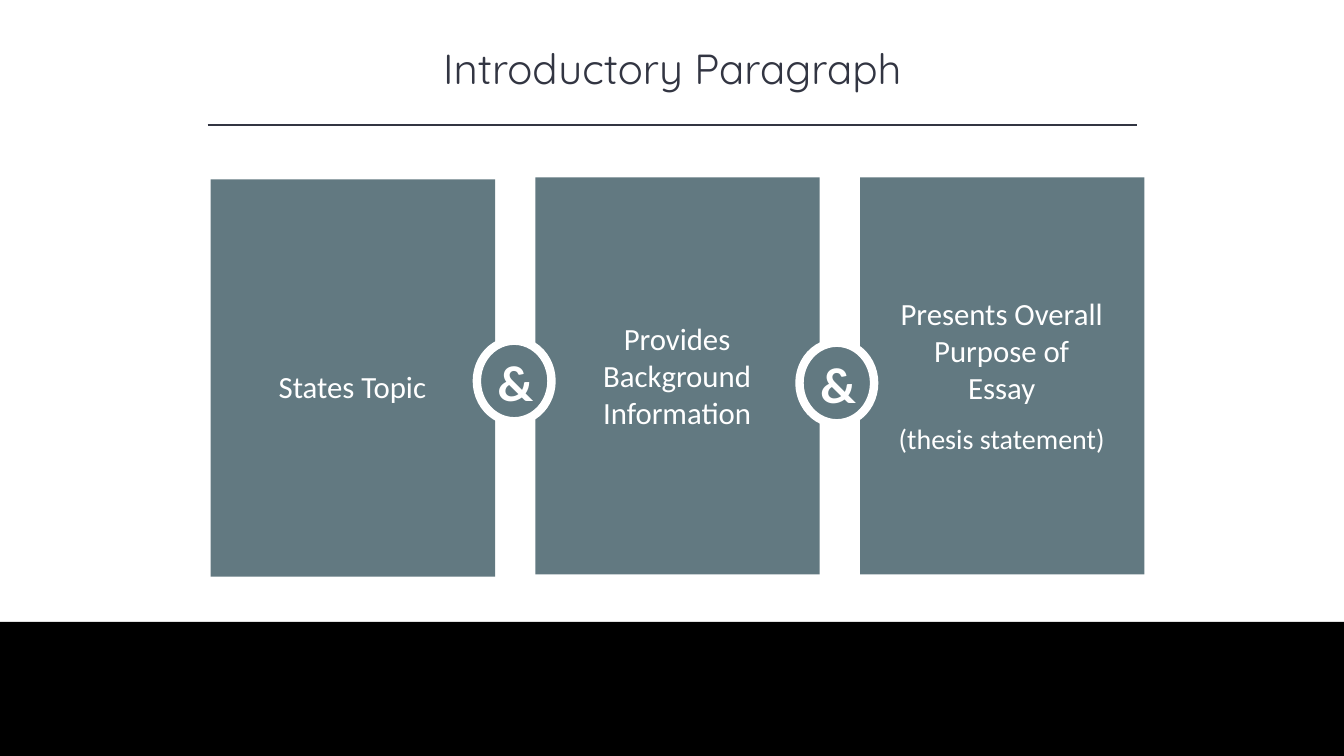
from lxml.etree import SubElement
from pptx import Presentation
from pptx.dml.color import RGBColor
from pptx.enum.shapes import MSO_CONNECTOR, MSO_SHAPE
from pptx.enum.text import MSO_ANCHOR, PP_ALIGN
from pptx.oxml.ns import qn
from pptx.util import Inches, Pt

INK = RGBColor(0x32, 0x35, 0x42)
SLATE = RGBColor(0x62, 0x79, 0x81)
WHITE = RGBColor(0xFF, 0xFF, 0xFF)
BLACK = RGBColor(0x00, 0x00, 0x00)

CARD_WIDTH, CARD_HEIGHT = 2.82, 3.94
CARD_LEFT, CARD_GAP = 2.09, 0.4
LABEL_WIDTH, LABEL_INSET = 2.25, 0.28

# Each card: top, label top, label height, lines of (text, size, line spacing)
CARDS = [
    (1.78, 3.44, 0.6, [("States Topic", 22, 1.5)]),
    (1.76, 3.12, 1.21, [("Provides Background Information", 22, 1)]),
    (1.76, 2.89, 1.66, [("Presents Overall Purpose of Essay", 22, 1),
                        ("(thesis statement)", 20, 1.5)]),
]
BADGES = [(4.73, 3.38), (7.93, 3.4)]


class SlideBuilder:
    heading_font = "Quicksand"
    body_font = "Calibri"

    def __init__(self, deck):
        self.slide = deck.slides.add_slide(deck.slide_layouts[5])

    def set_lines(self, frame, lines, font, color, bold=False):
        """Fill a frame with centred lines of (text, size, line spacing)."""
        frame.word_wrap = True
        frame.text = "\n".join(text for text, _, _ in lines)
        for para, (_, size, spacing) in zip(frame.paragraphs, lines):
            para.alignment = PP_ALIGN.CENTER
            para.line_spacing = spacing
            for span in para.runs:
                span.font.name = font
                span.font.size = Pt(size)
                span.font.bold = bold
                span.font.color.rgb = color

    def title(self, text, left, top, width, height):
        box = self.slide.shapes.title
        box.left, box.top = Inches(left), Inches(top)
        box.width, box.height = Inches(width), Inches(height)
        box.text_frame.vertical_anchor = MSO_ANCHOR.TOP
        self.set_lines(box.text_frame, [(text, 30, 1)], self.heading_font, INK)

    def rule(self, left, right, y):
        line = self.slide.shapes.add_connector(
            MSO_CONNECTOR.STRAIGHT, Inches(left), Inches(y), Inches(right), Inches(y))
        line.line.color.rgb = INK
        line.line.width = Pt(1)
        SubElement(line._element.spPr, qn("a:effectLst"))

    def block(self, left, top, width, height, fill, kind=MSO_SHAPE.RECTANGLE):
        shape = self.slide.shapes.add_shape(
            kind, Inches(left), Inches(top), Inches(width), Inches(height))
        shape.shadow.inherit = False
        shape.fill.solid()
        shape.fill.fore_color.rgb = fill
        shape.line.fill.background()
        return shape

    def card(self, left, top, label_top, label_height, lines):
        self.block(left, top, CARD_WIDTH, CARD_HEIGHT, SLATE)
        label = self.block(left + LABEL_INSET, label_top, LABEL_WIDTH, label_height, SLATE)
        label.text_frame.vertical_anchor = MSO_ANCHOR.MIDDLE
        self.set_lines(label.text_frame, lines, self.body_font, WHITE)

    def badge(self, text, left, top):
        badge = self.block(left, top, 0.74, 0.8, SLATE, MSO_SHAPE.OVAL)
        badge.line.color.rgb = WHITE
        badge.line.width = Pt(6)
        badge.text_frame.vertical_anchor = MSO_ANCHOR.MIDDLE
        self.set_lines(badge.text_frame, [(text, 36, 1)], self.body_font, WHITE, bold=True)


def main():
    deck = Presentation()
    deck.slide_width, deck.slide_height = Inches(13.33), Inches(7.5)
    page = SlideBuilder(deck)
    page.title("Introductory Paragraph", 1.67, 0.37, 10, 0.61)
    page.rule(2.06, 11.28, 1.24)
    for index, (top, label_top, label_height, lines) in enumerate(CARDS):
        left = CARD_LEFT + index * (CARD_WIDTH + CARD_GAP)
        page.card(left, top, label_top, label_height, lines)
    page.block(0, 6.17, 13.33, 1.33, BLACK)
    for left, top in BADGES:
        page.badge("&", left, top)
    deck.save("out.pptx")


if __name__ == "__main__":
    main()
